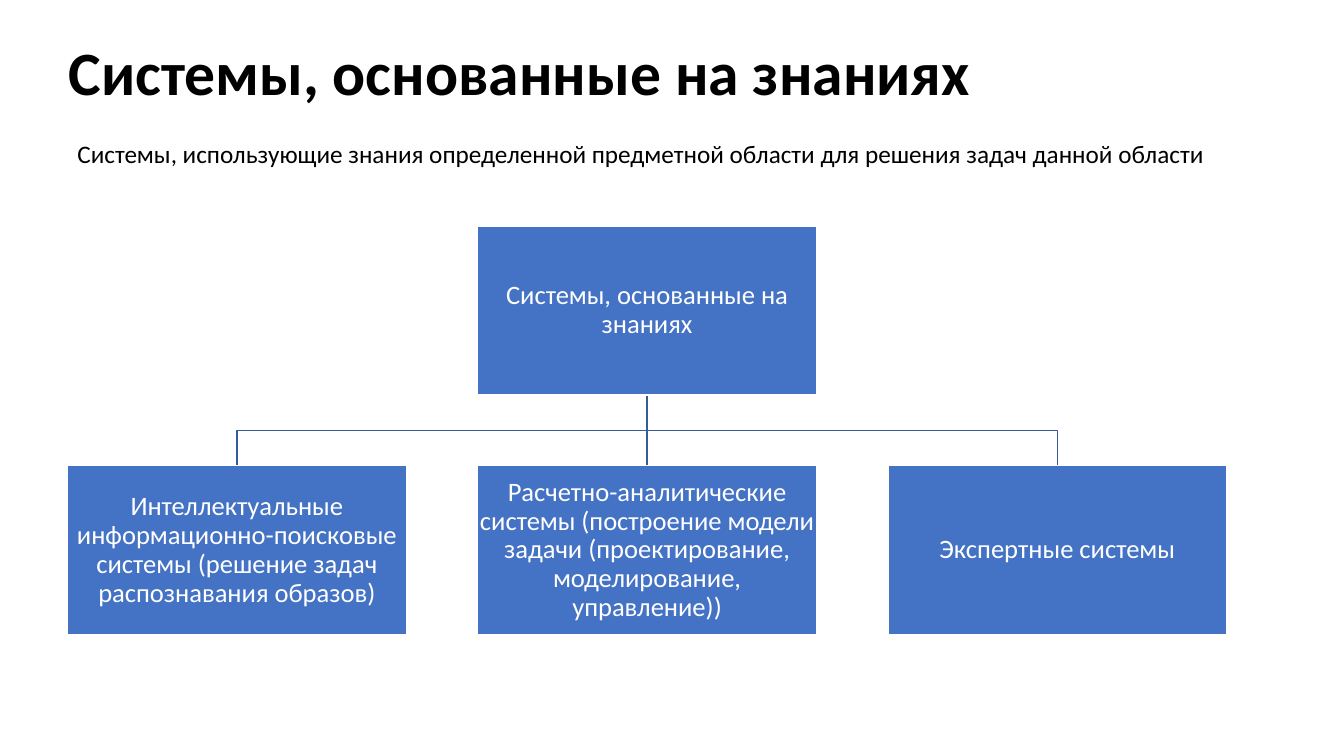
from lxml.etree import SubElement
from pptx import Presentation
from pptx.dml.color import RGBColor
from pptx.enum.shapes import MSO_CONNECTOR, MSO_SHAPE
from pptx.enum.text import MSO_ANCHOR, PP_ALIGN
from pptx.oxml.ns import qn
from pptx.util import Pt

BLUE = RGBColor(0x44, 0x72, 0xC4)
LINE_BLUE = RGBColor(0x36, 0x5B, 0x9D)
WHITE = RGBColor(0xFF, 0xFF, 0xFF)
BLACK = RGBColor(0, 0, 0)

BOX_WIDTH, BOX_HEIGHT = 242, 121
LEFT, STEP = 48.2, 293
ROOT_TOP, BRANCH_TOP = 161.3, 332.6
ROOT_LEFT = LEFT + STEP
ROOT_CENTER = ROOT_LEFT + BOX_WIDTH / 2
ROOT_BOTTOM = ROOT_TOP + BOX_HEIGHT
BUS_Y = (ROOT_BOTTOM + BRANCH_TOP) / 2

ROOT = "Системы, основанные на знаниях"
BRANCHES = [
    "Интеллектуальные информационно-поисковые системы (решение задач распознавания образов)",
    "Расчетно-аналитические системы (построение модели задачи (проектирование, моделирование, управление))",
    "Экспертные системы",
]


def style_text(paragraph, size, color, bold=False):
    font = paragraph.runs[0].font
    font.name = "Calibri"
    font.size = Pt(size)
    font.bold = bold
    font.color.rgb = color


def add_box(slide, text, left, top):
    box = slide.shapes.add_shape(
        MSO_SHAPE.RECTANGLE, Pt(left), Pt(top), Pt(BOX_WIDTH), Pt(BOX_HEIGHT))
    box.shadow.inherit = False
    box.fill.solid()
    box.fill.fore_color.rgb = BLUE
    box.line.color.rgb = WHITE
    box.line.width = Pt(1)
    frame = box.text_frame
    frame.word_wrap = True
    frame.vertical_anchor = MSO_ANCHOR.MIDDLE
    frame.margin_left = frame.margin_right = Pt(0.95)
    frame.margin_top = frame.margin_bottom = Pt(0.95)
    frame.text = text
    paragraph = frame.paragraphs[0]
    paragraph.alignment = PP_ALIGN.CENTER
    paragraph.line_spacing = 0.9
    style_text(paragraph, 19, WHITE)


prs = Presentation()
prs.slide_width, prs.slide_height = Pt(960), Pt(540)
slide = prs.slides.add_slide(prs.slide_layouts[5])

title = slide.shapes.title
title.left, title.top, title.width, title.height = Pt(41.8), Pt(13), Pt(911.5), Pt(82)
title.text_frame.text = ROOT
title.text_frame.vertical_anchor = MSO_ANCHOR.MIDDLE
heading = title.text_frame.paragraphs[0]
heading.alignment = PP_ALIGN.LEFT
heading.line_spacing = 0.9
style_text(heading, 44, BLACK, bold=True)

definition = slide.shapes.add_textbox(Pt(48.2), Pt(95), Pt(851), Pt(29))
definition.text_frame.word_wrap = True
definition.text_frame.text = (
    "Системы, использующие знания определенной предметной области "
    "для решения задач данной области")
style_text(definition.text_frame.paragraphs[0], 18, BLACK)

# Branch lines: elbows to the outer boxes, a straight line to the middle one
for column in (2, 1, 0):
    center = LEFT + column * STEP + BOX_WIDTH / 2
    if column == 1:
        branch_line = slide.shapes.add_connector(
            MSO_CONNECTOR.STRAIGHT, Pt(ROOT_CENTER), Pt(ROOT_BOTTOM),
            Pt(ROOT_CENTER), Pt(BRANCH_TOP))
        SubElement(branch_line.element.spPr, qn("a:effectLst"))
    else:
        elbow = slide.shapes.build_freeform(Pt(ROOT_CENTER), Pt(ROOT_BOTTOM))
        elbow.add_line_segments(
            [(Pt(ROOT_CENTER), Pt(BUS_Y)), (Pt(center), Pt(BUS_Y)),
             (Pt(center), Pt(BRANCH_TOP))], close=False)
        branch_line = elbow.convert_to_shape()
        branch_line.shadow.inherit = False
        branch_line.fill.background()
    branch_line.line.color.rgb = LINE_BLUE
    branch_line.line.width = Pt(1)

add_box(slide, ROOT, ROOT_LEFT, ROOT_TOP)
for column, branch in enumerate(BRANCHES):
    add_box(slide, branch, LEFT + column * STEP, BRANCH_TOP)

prs.save("out.pptx")
